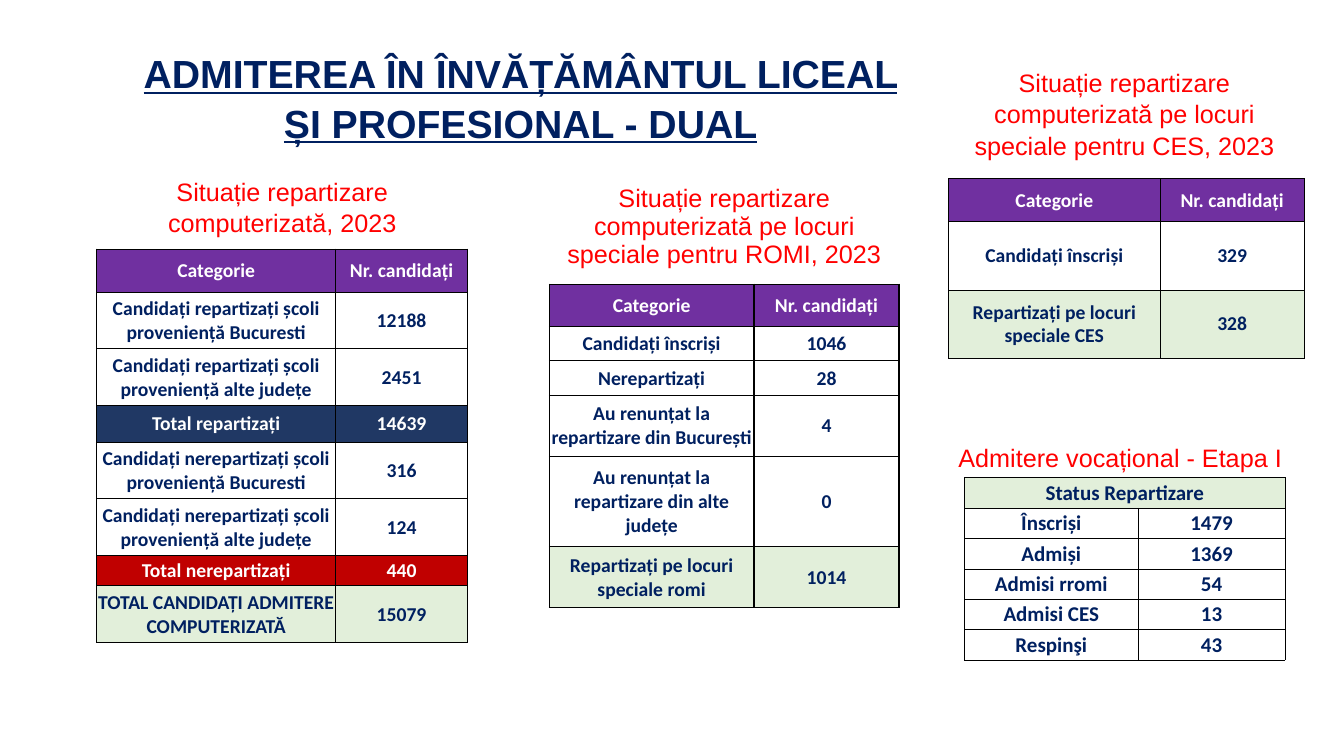
from lxml.etree import SubElement
from pptx import Presentation
from pptx.dml.color import RGBColor
from pptx.enum.text import MSO_ANCHOR, MSO_AUTO_SIZE, PP_ALIGN
from pptx.oxml.ns import qn
from pptx.util import Pt

WHITE = RGBColor(0xFF, 0xFF, 0xFF)
BLACK = RGBColor(0x00, 0x00, 0x00)
NAVY = RGBColor(0x00, 0x20, 0x60)
DARK_BLUE = RGBColor(0x20, 0x38, 0x64)
BLUE = RGBColor(0x00, 0x70, 0xC0)
PURPLE = RGBColor(0x70, 0x30, 0xA0)
RED = RGBColor(0xFF, 0x00, 0x00)
DARK_RED = RGBColor(0xC0, 0x00, 0x00)
PALE_GREEN = RGBColor(0xE2, 0xEF, 0xDA)

TITLE_STYLE = {"size": 28, "color": NAVY, "outline": BLUE, "bold": True, "underline": True}
HEADING_STYLE = {"size": 18, "color": RED, "outline": PURPLE}

HEADINGS = [
    ("Situație repartizare computerizată, 2023",
     (69.12, 120.96, 264.96, 51.12), PP_ALIGN.CENTER, HEADING_STYLE),
    ("Situație repartizare computerizată pe locuri speciale pentru CES, 2023",
     (686.16, 43.2, 234, 72.72), PP_ALIGN.CENTER, HEADING_STYLE),
    ("Admitere vocațional - Etapa I",
     (677.52, 311.04, 264.96, 28.8), PP_ALIGN.LEFT, HEADING_STYLE),
    ("ADMITEREA ÎN ÎNVĂȚĂMÂNTUL LICEAL ȘI PROFESIONAL - DUAL",
     (87.12, 30.24, 569.52, 74.88), PP_ALIGN.CENTER, TITLE_STYLE),
]

HEADER = ("Categorie", "Nr. candidați")

TABLES = [
    {"at": (69.12, 177.84), "columns": (170.64, 94.32), "border": 0.5, "size": 14, "rows": [
        (30.7, PURPLE, *HEADER),
        (40.5, None, "Candidați repartizați școli proveniență Bucuresti", "12188"),
        (40.5, None, "Candidați repartizați școli proveniență alte județe", "2451"),
        (26.3, DARK_BLUE, "Total repartizați", "14639"),
        (40.5, None, "Candidați nerepartizați școli proveniență Bucuresti", "316"),
        (40.5, None, "Candidați nerepartizați școli proveniență alte județe", "124"),
        (21.7, DARK_RED, "Total nerepartizați", "440"),
        (40.5, PALE_GREEN, "TOTAL CANDIDAȚI ADMITERE COMPUTERIZATĂ", "15079"),
    ]},
    {"at": (392.4, 120.24), "columns": (146.16, 103.68), "border": 1, "size": 14, "rows": [
        (82.8, None, "Situație repartizare computerizată pe locuri speciale pentru ROMI, 2023"),
        (30.2, PURPLE, *HEADER),
        (24.5, None, "Candidați înscriși", "1046"),
        (24.5, None, "Nerepartizați", "28"),
        (43.7, None, "Au renunțat la repartizare din București", "4"),
        (64.5, None, "Au renunțat la repartizare din alte județe", "0"),
        (43.7, PALE_GREEN, "Repartizați pe locuri speciale romi", "1014"),
    ]},
    {"at": (677.52, 127.44), "columns": (151.2, 102.96), "border": 0.5, "size": 14, "rows": [
        (31, PURPLE, *HEADER),
        (48.6, None, "Candidați înscriși", "329"),
        (48.6, PALE_GREEN, "Repartizați pe locuri speciale CES", "328"),
    ]},
    {"at": (689.04, 341.28), "columns": (123.84, 105.12), "border": 0.5, "size": 15, "rows": [
        (21.7, PALE_GREEN, "Status Repartizare"),
        (21.7, WHITE, "Înscriși", "1479"),
        (21.7, WHITE, "Admiși", "1369"),
        (21.7, WHITE, "Admisi rromi", "54"),
        (21.7, WHITE, "Admisi CES", "13"),
        (21.7, None, "Respinşi", "43"),
    ]},
]


def add_solid_fill(parent, color):
    fill = SubElement(parent, qn("a:solidFill"))
    SubElement(fill, qn("a:srgbClr"), val=str(color))


def write(paragraph, text, size, color, font="Arial", bold=False, underline=False,
          outline=None, align=PP_ALIGN.CENTER):
    paragraph.alignment = align
    run = paragraph.add_run()
    run.text = text
    run.font.name = font
    run.font.size = Pt(size)
    run.font.bold = bold
    run.font.underline = underline
    run.font.color.rgb = color
    if outline is not None:
        properties = run.font._element
        line = SubElement(properties, qn("a:ln"), w=str(Pt(0.75)))
        add_solid_fill(line, outline)
        properties.insert(0, line)


def set_borders(cell, width, visible_sides):
    properties = cell._tc.get_or_add_tcPr()
    for position, side in enumerate("LRTB"):
        line = SubElement(properties, qn(f"a:ln{side}"), w=str(Pt(width)))
        if side in visible_sides:
            add_solid_fill(line, BLACK)
        else:
            SubElement(line, qn("a:noFill"))
        properties.insert(position, line)


def add_heading(slide, text, box, align, style):
    shape = slide.shapes.add_textbox(*map(Pt, box))
    frame = shape.text_frame
    frame.word_wrap = True
    frame.auto_size = MSO_AUTO_SIZE.SHAPE_TO_FIT_TEXT
    paragraph = frame.paragraphs[0]
    paragraph.line_spacing = 1.05
    write(paragraph, text, align=align, **style)


def add_candidate_table(slide, content):
    rows, columns = content["rows"], content["columns"]
    size = sum(columns), sum(row[0] for row in rows)
    shape = slide.shapes.add_table(len(rows), len(columns), *map(Pt, content["at"] + size))
    table = shape.table
    table.first_row = False
    table.horz_banding = False
    for column, width in zip(table.columns, columns):
        column.width = Pt(width)
    for row_index, (height, fill, *texts) in enumerate(rows):
        table.rows[row_index].height = Pt(height)
        is_heading = len(texts) == 1 and fill is None
        for column_index in range(len(columns)):
            cell = table.cell(row_index, column_index)
            cell.vertical_anchor = MSO_ANCHOR.MIDDLE
            cell.margin_left = cell.margin_right = cell.margin_top = Pt(0.6)
            cell.margin_bottom = Pt(0)
            if fill is None:
                cell.fill.background()
            else:
                cell.fill.solid()
                cell.fill.fore_color.rgb = fill
            set_borders(cell, content["border"], "B" if is_heading else "LRTB")
        if len(texts) == 1:
            table.cell(row_index, 0).merge(table.cell(row_index, 1))
        for column_index, text in enumerate(texts):
            paragraph = table.cell(row_index, column_index).text_frame.paragraphs[0]
            if is_heading:
                write(paragraph, text, **HEADING_STYLE)
            else:
                color = WHITE if fill in (PURPLE, DARK_BLUE, DARK_RED) else NAVY
                write(paragraph, text, content["size"], color, font="Calibri", bold=True)


def main():
    presentation = Presentation()
    presentation.slide_width = Pt(960)
    presentation.slide_height = Pt(540)
    slide = presentation.slides.add_slide(presentation.slide_layouts[6])
    for content in TABLES:
        add_candidate_table(slide, content)
    for heading in HEADINGS:
        add_heading(slide, *heading)
    presentation.save("out.pptx")


if __name__ == "__main__":
    main()
